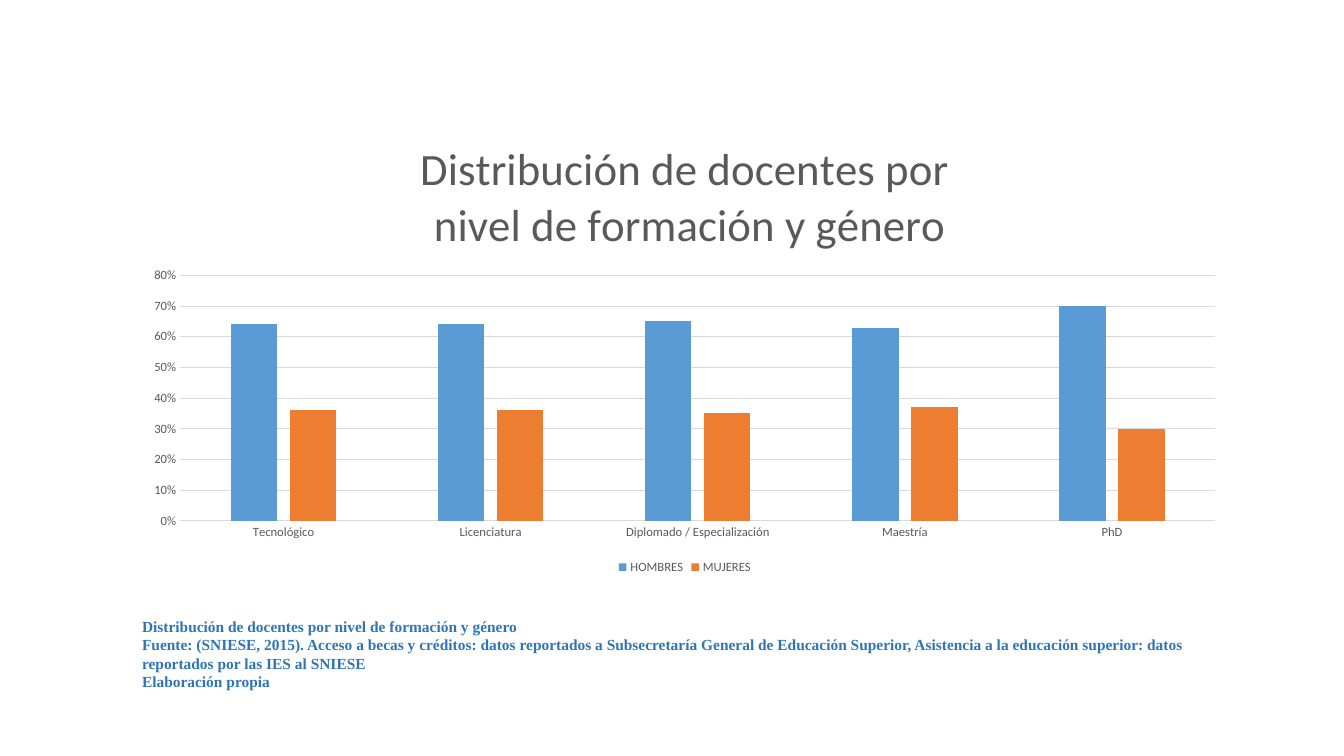
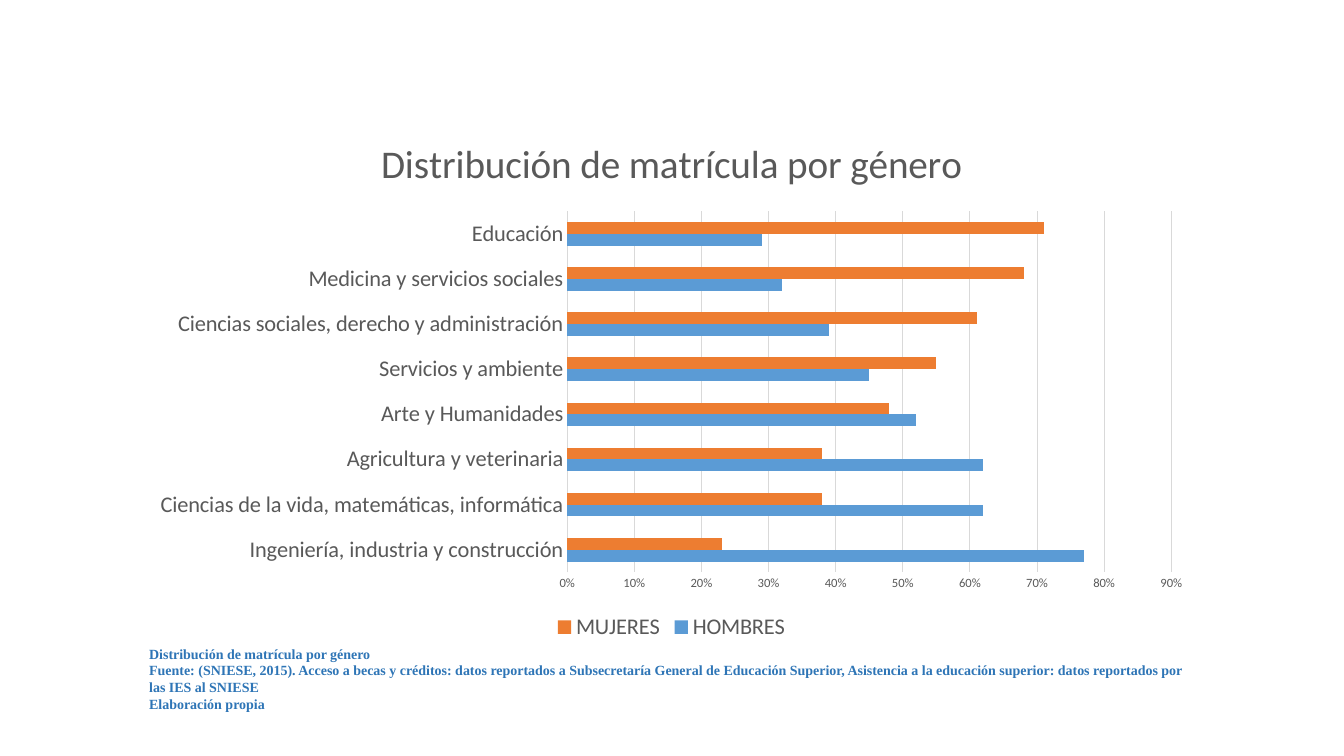
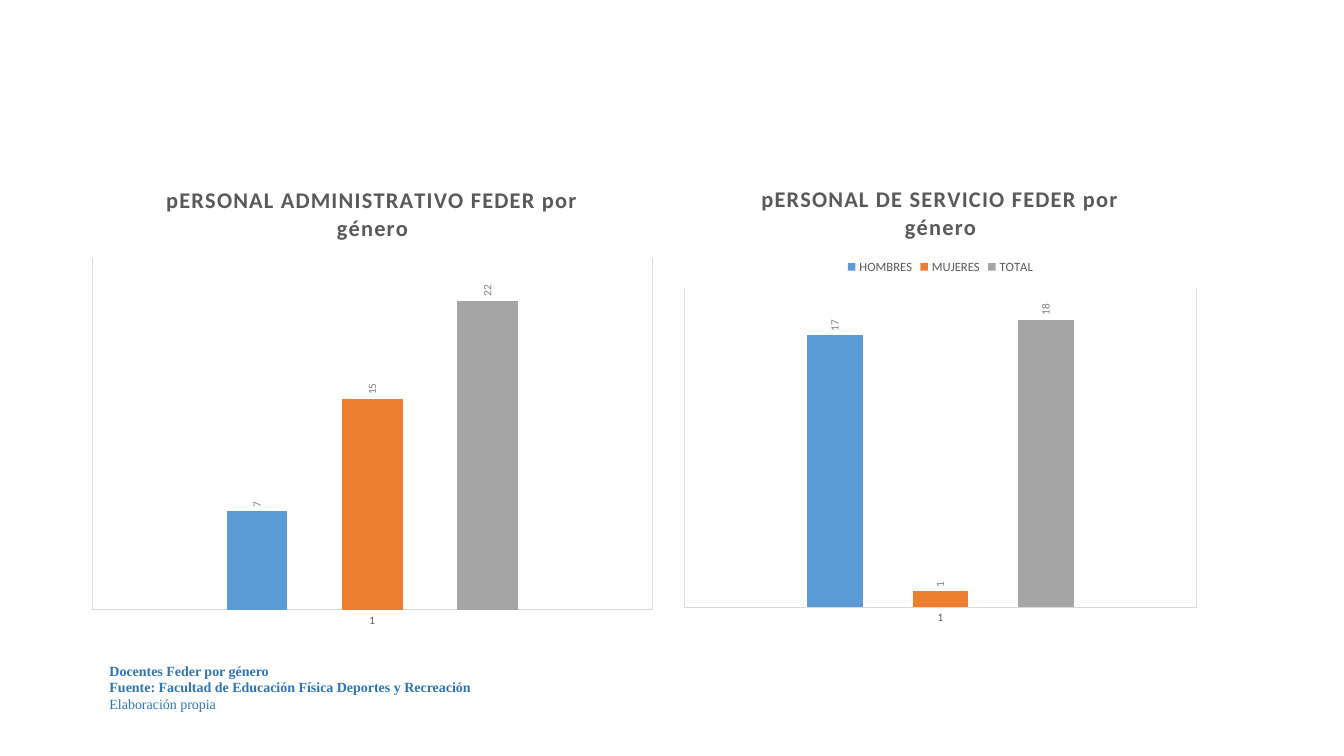
from dataclasses import dataclass

from pptx import Presentation
from pptx import util as u
from pptx.chart.data import CategoryChartData
from pptx.dml.color import RGBColor
from pptx.enum import chart as ch
from pptx.oxml.ns import qn


@dataclass(frozen=True)
class Theme:
    chart_font: str = "Calibri"
    source_font: str = "Times New Roman"
    label: str = "595959"
    value: str = "808080"
    rule: str = "D9D9D9"
    source: str = "2E75B6"
    series: tuple = ("5B9BD5", "ED7D31", "A5A5A5")
    value_size: int = 8
    small: int = 9
    heading: int = 16
    rule_width: float = 0.75


THEME = Theme()
COLUMN = ch.XL_CHART_TYPE.COLUMN_CLUSTERED
BAR = ch.XL_CHART_TYPE.BAR_CLUSTERED
BOTTOM, TOP = ch.XL_LEGEND_POSITION.BOTTOM, ch.XL_LEGEND_POSITION.TOP
SOURCE = (
    "Fuente: (SNIESE, 2015). Acceso a becas y créditos: datos reportados a "
    "Subsecretaría General de Educación Superior, Asistencia a la educación "
    "superior: datos reportados por las IES al SNIESE"
)
AUTHOR = "Elaboración propia"


def apply(target, **values):
    for name, value in values.items():
        setattr(target, name, value)


def style_font(font, size, colour, name=THEME.chart_font, bold=False):
    apply(font, size=u.Pt(size), name=name, bold=bold)
    font.color.rgb = RGBColor.from_string(colour)


def style_rule(line):
    line.width = u.Pt(THEME.rule_width)
    line.color.rgb = RGBColor.from_string(THEME.rule)


def place(box):
    return [u.Cm(length) for length in box]


# Chart parts
def add_heading(chart, lines, size, bold=False, spacing=0):
    chart.has_title = True
    frame = chart.chart_title.text_frame
    for index, line in enumerate(lines):
        para = frame.add_paragraph() if index else frame.paragraphs[0]
        span = para.add_run()
        span.text = line
        style_font(span.font, size, THEME.label, bold=bold)
        if spacing:
            span._r.get_or_add_rPr().set("spc", str(spacing))


def add_legend(chart, position, size):
    chart.has_legend = position is not None
    if chart.has_legend:
        apply(chart.legend, position=position, include_in_layout=False)
        style_font(chart.legend.font, size, THEME.label)


def style_axes(chart, label_size, maximum, unit, show_values):
    category, value = chart.category_axis, chart.value_axis
    for axis in (category, value):
        apply(axis, major_tick_mark=ch.XL_TICK_MARK.NONE,
              minor_tick_mark=ch.XL_TICK_MARK.NONE)
    style_rule(category.format.line)
    style_font(category.tick_labels.font, label_size, THEME.label)
    apply(value, minimum_scale=0, maximum_scale=maximum, major_unit=unit,
          visible=show_values)
    apply(category, has_major_gridlines=not show_values)
    apply(value, has_major_gridlines=show_values)
    ruled = value if show_values else category
    style_rule(ruled.major_gridlines.format.line)
    if show_values:
        value.format.line.fill.background()
        style_font(value.tick_labels.font, THEME.small, THEME.label)
        apply(value.tick_labels, number_format="0%",
              number_format_is_linked=False)


def add_upright_values(plot):
    plot.has_data_labels = True
    labels = plot.data_labels
    apply(labels, show_value=True, position=ch.XL_LABEL_POSITION.OUTSIDE_END)
    style_font(labels.font, THEME.value_size, THEME.value)
    body = labels._element.find(qn("c:txPr")).find(qn("a:bodyPr"))
    for name, setting in {"rot": "-5400000", "vert": "horz"}.items():
        body.set(name, setting)


def add_bars(page, box, kind, categories, series, number_format, gap, overlap):
    data = CategoryChartData(number_format=number_format)
    data.categories = categories
    for name, values in series.items():
        data.add_series(name, values)
    chart = page.shapes.add_chart(kind, *place(box), data).chart
    style_font(chart.font, 10, "000000")
    plot = chart.plots[0]
    apply(plot, gap_width=gap, overlap=overlap, vary_by_categories=False)
    for item, colour in zip(plot.series, THEME.series):
        item.format.fill.solid()
        item.format.fill.fore_color.rgb = RGBColor.from_string(colour)
    return chart


# Chart of shares in percent, with a value axis
def share_chart(page, box, kind, heading, heading_size, categories, series,
                gap, overlap, label_size, maximum):
    chart = add_bars(page, box, kind, categories, series, "0%", gap, overlap)
    add_heading(chart, heading, heading_size)
    add_legend(chart, BOTTOM, label_size)
    style_axes(chart, label_size, maximum, 0.1, True)


# Chart of head counts, with values above the columns
def staff_chart(page, box, heading, counts, maximum, legend=None):
    names = ("HOMBRES", "MUJERES", "TOTAL")
    series = {name: [count] for name, count in zip(names, counts)}
    chart = add_bars(page, box, COLUMN, ["1"], series, "General", 444, -90)
    add_heading(chart, [heading], THEME.heading, bold=True, spacing=100)
    add_legend(chart, legend, THEME.small)
    style_axes(chart, THEME.value_size, maximum, 5, False)
    add_upright_values(chart.plots[0])


# Source note below the charts
def source_note(page, box, lines, size, plain_last=False):
    frame = page.shapes.add_textbox(*place(box)).text_frame
    frame.word_wrap = True
    for index, line in enumerate(lines):
        para = frame.add_paragraph() if index else frame.paragraphs[0]
        span = para.add_run()
        span.text = line
        bold = not (plain_last and line == lines[-1])
        style_font(span.font, size, THEME.source, THEME.source_font, bold)


def teachers_slide(page):
    left, width = 3.33, 27.86
    share_chart(
        page, (left, 3.1, width, 11.48), COLUMN,
        ["Distribución de docentes por", " nivel de formación y género"], 32,
        ["Tecnológico", "Licenciatura", "Diplomado / Especialización",
         "Maestría", "PhD"],
        {"HOMBRES": (0.64, 0.64, 0.65, 0.63, 0.7),
         "MUJERES": (0.36, 0.36, 0.35, 0.37, 0.3)},
        gap=219, overlap=-27, label_size=THEME.small, maximum=0.8)
    source_note(page, (left, 15.42, width, 2.2),
                ["Distribución de docentes por nivel de formación y género",
                 SOURCE, AUTHOR], 11)


def enrolment_slide(page):
    left, width = 3.51, 26.82
    heading = "Distribución de matrícula por género"
    share_chart(
        page, (left, 2.87, width, 13.39), BAR, [heading], 28,
        ["Ingeniería, industria y construcción",
         "Ciencias de la vida, matemáticas, informática",
         "Agricultura y veterinaria", "Arte y Humanidades",
         "Servicios y ambiente", "Ciencias sociales, derecho y administración",
         "Medicina y servicios sociales", "Educación"],
        {"HOMBRES": (0.77, 0.62, 0.62, 0.52, 0.45, 0.39, 0.32, 0.29),
         "MUJERES": (0.23, 0.38, 0.38, 0.48, 0.55, 0.61, 0.68, 0.71)},
        gap=182, overlap=0, label_size=THEME.heading, maximum=0.9)
    source_note(page, (left, 16.13, width, 2), [heading, SOURCE, AUTHOR], 10)


def staff_slide(page):
    staff_chart(page, (2.03, 4.19, 14.71, 11.86),
                "pERSONAL ADMINISTRATIVO FEDER por género", (7, 15, 22), 25)
    staff_chart(page, (16.97, 4.17, 13.46, 11.81),
                "pERSONAL DE SERVICIO FEDER por género", (17, 1, 18), 20, TOP)
    source_note(page, (2.51, 16.56, 28.85, 1.55),
                ["Docentes Feder por género",
                 "Fuente: Facultad de Educación Física Deportes y Recreación",
                 AUTHOR], 10, plain_last=True)


def main():
    deck = Presentation()
    apply(deck, slide_width=u.Cm(33.87), slide_height=u.Cm(19.05))
    blank = deck.slide_layouts.get_by_name("Blank")
    for build in (teachers_slide, enrolment_slide, staff_slide):
        build(deck.slides.add_slide(blank))
    deck.save("out.pptx")


if __name__ == "__main__":
    main()
